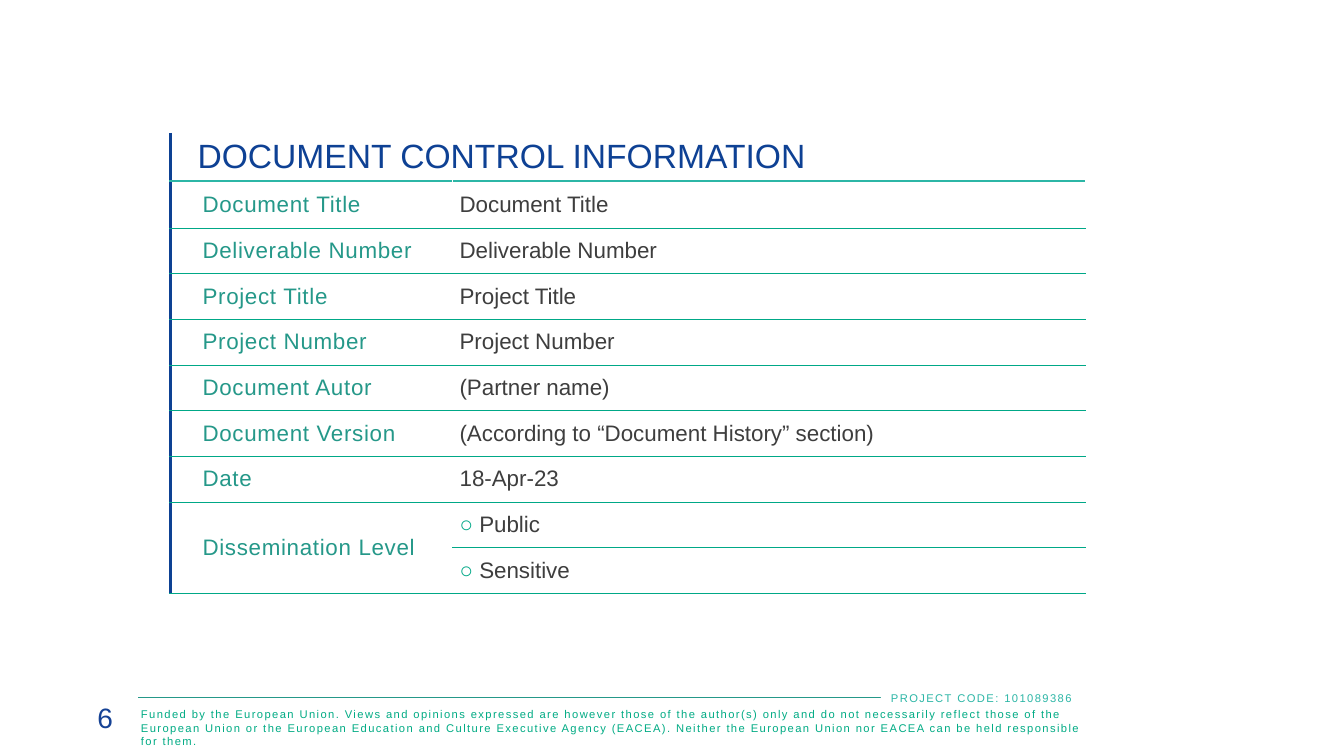
from dataclasses import dataclass

from lxml.etree import SubElement
from pptx import Presentation
from pptx.dml.color import RGBColor
from pptx.enum.shapes import MSO_CONNECTOR as Connector, MSO_SHAPE as Preset
from pptx.enum.text import MSO_ANCHOR as Anchor, PP_ALIGN as Align
from pptx.oxml import parse_xml
from pptx.oxml.ns import nsdecls, qn
from pptx.slide import Slide
from pptx.table import Table, _Cell as Cell
from pptx.text.text import TextFrame
from pptx.util import Length, Pt

WHITE = RGBColor(0xFF, 0xFF, 0xFF)
NAVY = RGBColor(0x0D, 0x41, 0x93)
TITLE_BLUE = RGBColor(0x0E, 0x41, 0x94)
NUMBER_BLUE = RGBColor(0x15, 0x42, 0x95)
LABEL_TEAL = RGBColor(0x25, 0x98, 0x89)
LIGHT_TEAL = RGBColor(0x2C, 0xB6, 0xA6)
RULE_GREEN = RGBColor(0x00, 0xA8, 0x87)
FOOTER_GREEN = RGBColor(0x00, 0xAB, 0x84)
BODY_GREY = RGBColor(0x3E, 0x3E, 0x3E)
FONT = "Arial"

TITLE = "DOCUMENT CONTROL INFORMATION"
DISCLAIMER = (
    "Funded by the European Union. Views and opinions expressed are however those of the "
    "author(s) only and do not necessarily reflect those of the European Union or the European "
    "Education and Culture Executive Agency (EACEA). Neither the European Union nor EACEA can "
    "be held responsible for them."
)
ENTRIES = [
    ("Document Title", "Document Title"),
    ("Deliverable Number", "Deliverable Number"),
    ("Project Title", "Project Title"),
    ("Project Number", "Project Number"),
    ("Document Autor", "(Partner name)"),
    ("Document Version", "(According to “Document History” section)"),
    ("Date", "18-Apr-23"),
    ("Dissemination Level", "Public"),
    ("", "Sensitive"),
]
LEVEL_ROWS = (8, 9)
COLUMN_WIDTHS = (201.6, 452.2)
ROW_HEIGHTS = [34.4, 33.6] + [32.6] * 8


@dataclass(frozen=True)
class TextStyle:
    size: float
    color: RGBColor
    spacing: float = 0


@dataclass(frozen=True)
class Border:
    color: RGBColor
    width: float


@dataclass(frozen=True)
class FooterText:
    text: str
    left: float
    top: float
    width: float
    height: float
    style: TextStyle
    align: Align = Align.LEFT
    line_spacing: float = 1.0
    boxed: bool = False


TITLE_STYLE = TextStyle(24, TITLE_BLUE)
LABEL_STYLE = TextStyle(16, LABEL_TEAL, 0.5)
VALUE_STYLE = TextStyle(16, BODY_GREY)
MARK_STYLE = TextStyle(16, RULE_GREEN)

SIDE_BAR = Border(NAVY, 2.25)
TITLE_RULE = Border(LIGHT_TEAL, 1.5)
ROW_RULE = Border(RULE_GREEN, 0.5)
LEVEL_RULE = Border(RULE_GREEN, 0.25)
INNER_EDGE = Border(WHITE, 0.25)
OUTER_EDGE = Border(WHITE, 1)

FOOTER_TEXTS = [
    FooterText(DISCLAIMER, 93.6, 501.8, 689.8, 36, TextStyle(8, FOOTER_GREEN, 1)),
    FooterText("6", 19.4, 496.8, 68.4, 31.7, TextStyle(20, NUMBER_BLUE), Align.RIGHT),
    FooterText("PROJECT CODE: 101089386", 629.3, 489.6, 160.6, 17.3,
               TextStyle(8, LIGHT_TEAL, 1), line_spacing=1.07, boxed=True),
]


def write(frame: TextFrame, *pieces: tuple[str, TextStyle]) -> None:
    """Add styled runs to the first paragraph of the frame."""
    for text, style in pieces:
        run = frame.paragraphs[0].add_run()
        run.text = text
        for name, value in {"name": FONT, "size": Pt(style.size), "bold": False}.items():
            setattr(run.font, name, value)
        run.font.color.rgb = style.color
        if style.spacing:
            run.font._element.set("spc", str(int(style.spacing * 100)))


def set_borders(cell: Cell, left: Border, right: Border, top: Border, bottom: Border) -> None:
    properties = cell._tc.get_or_add_tcPr()
    sides = {"lnL": left, "lnR": right, "lnT": top, "lnB": bottom}
    for position, (tag, border) in enumerate(sides.items()):
        line = parse_xml(f'<a:{tag} {nsdecls("a")} w="{Pt(border.width)}"><a:solidFill>'
                         f'<a:srgbClr val="{border.color}"/></a:solidFill></a:{tag}>')
        properties.insert(position, line)


def format_cell(cell: Cell, inset: float, indent: float) -> None:
    cell.fill.solid()
    cell.fill.fore_color.rgb = WHITE
    settings = {
        "vertical_anchor": Anchor.MIDDLE,
        "margin_left": Pt(inset), "margin_right": Pt(inset),
        "margin_top": Pt(0), "margin_bottom": Pt(0),
    }
    for name, value in settings.items():
        setattr(cell, name, value)
    cell.text_frame.paragraphs[0]._p.get_or_add_pPr().set("marL", str(Pt(indent)))


def set_row_borders(table: Table, row: int) -> None:
    top = TITLE_RULE if row == 1 else ROW_RULE
    bottom = TITLE_RULE if row == 0 else ROW_RULE
    first, last = LEVEL_ROWS
    value_top = LEVEL_RULE if row == last else top
    value_bottom = LEVEL_RULE if row == first else bottom
    if row == 0:
        top = value_top = INNER_EDGE
    set_borders(table.cell(row, 0), SIDE_BAR, INNER_EDGE, top, bottom)
    set_borders(table.cell(row, 1), INNER_EDGE, OUTER_EDGE, value_top, value_bottom)


def add_control_table(slide: Slide) -> None:
    frame = slide.shapes.add_table(len(ROW_HEIGHTS), 2, Pt(121.7), Pt(95),
                                   Pt(sum(COLUMN_WIDTHS)), Pt(sum(ROW_HEIGHTS)))
    table = frame.table
    for name in ("first_row", "horz_banding"):
        setattr(table, name, False)
    for column, width in zip(table.columns, COLUMN_WIDTHS):
        column.width = Pt(width)
    for index, height in enumerate(ROW_HEIGHTS):
        table.rows[index].height = Pt(height)
        format_cell(table.cell(index, 0), 5 if index == 0 else 8.6, 14.4)
        format_cell(table.cell(index, 1), 5, 0)
        set_row_borders(table, index)

    table.cell(0, 0).merge(table.cell(0, 1))
    table.cell(LEVEL_ROWS[0], 0).merge(table.cell(LEVEL_ROWS[1], 0))
    write(table.cell(0, 0).text_frame, (TITLE, TITLE_STYLE))
    for row, (label, value) in enumerate(ENTRIES, start=1):
        if label:
            write(table.cell(row, 0).text_frame, (label, LABEL_STYLE))
        pieces = [(value, VALUE_STYLE)]
        if row in LEVEL_ROWS:
            pieces = [("○", MARK_STYLE), (f" {value}", VALUE_STYLE)]
        write(table.cell(row, 1).text_frame, *pieces)


def add_footer_line(slide: Slide, left: Length, right: Length, top: Length) -> None:
    line = slide.shapes.add_connector(Connector.STRAIGHT, left, top, right, top)
    line.line.color.rgb = LABEL_TEAL
    line.line.width = Pt(0.75)
    SubElement(line._element.spPr, qn("a:effectLst"))


def add_footer_text(slide: Slide, item: FooterText) -> None:
    bounds = [Pt(value) for value in (item.left, item.top, item.width, item.height)]
    if item.boxed:
        shape = slide.shapes.add_shape(Preset.RECTANGLE, *bounds)
        shape.shadow.inherit = False
        shape.fill.solid()
        shape.fill.fore_color.rgb = WHITE
        shape.line.fill.background()
    else:
        shape = slide.shapes.add_textbox(*bounds)
    for name, value in {"word_wrap": True, "vertical_anchor": Anchor.TOP}.items():
        setattr(shape.text_frame, name, value)
    paragraph = shape.text_frame.paragraphs[0]
    for name, value in {"alignment": item.align, "line_spacing": item.line_spacing}.items():
        setattr(paragraph, name, value)
    write(shape.text_frame, (item.text, item.style))


def main() -> None:
    presentation = Presentation()
    presentation.slide_width, presentation.slide_height = Pt(960), Pt(540)
    slide = presentation.slides.add_slide(presentation.slide_layouts[6])
    add_footer_line(slide, Pt(98.6), Pt(760.3), Pt(498.2))
    for item in FOOTER_TEXTS:
        add_footer_text(slide, item)
    add_control_table(slide)
    presentation.save("out.pptx")


if __name__ == "__main__":
    main()
